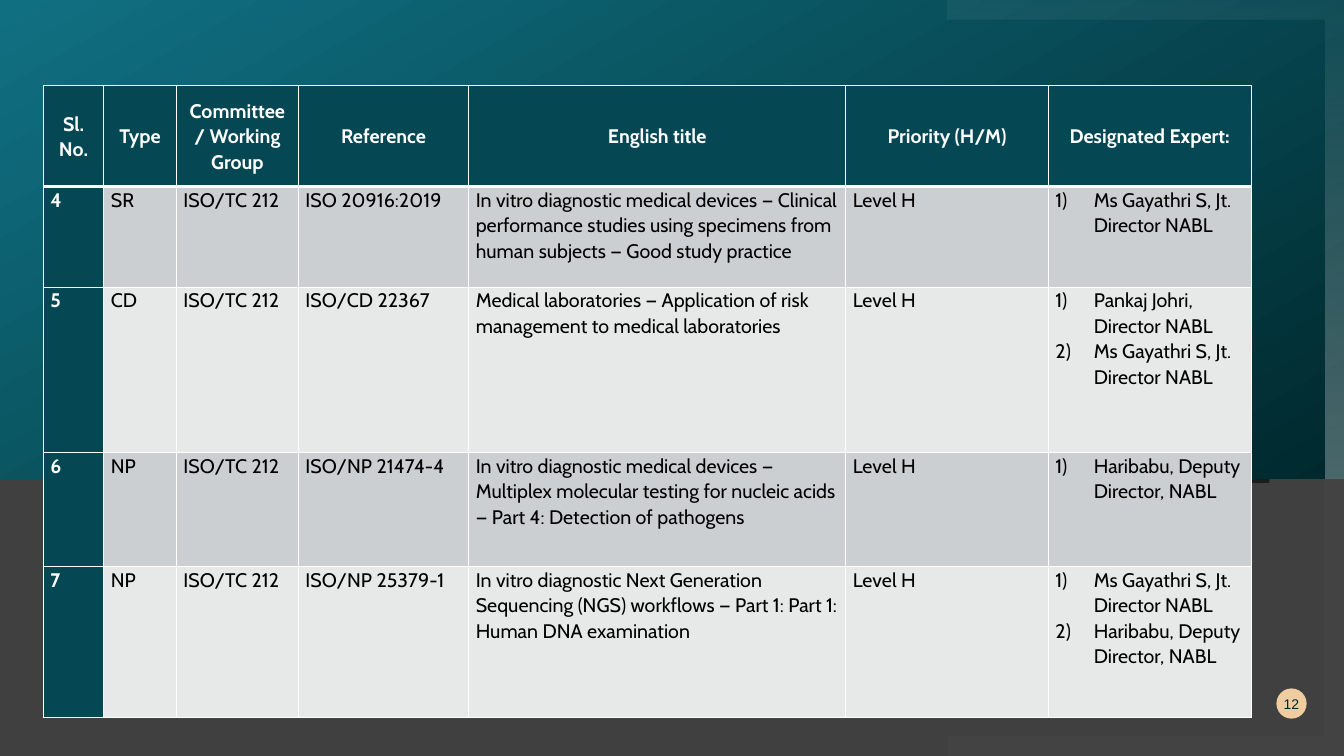
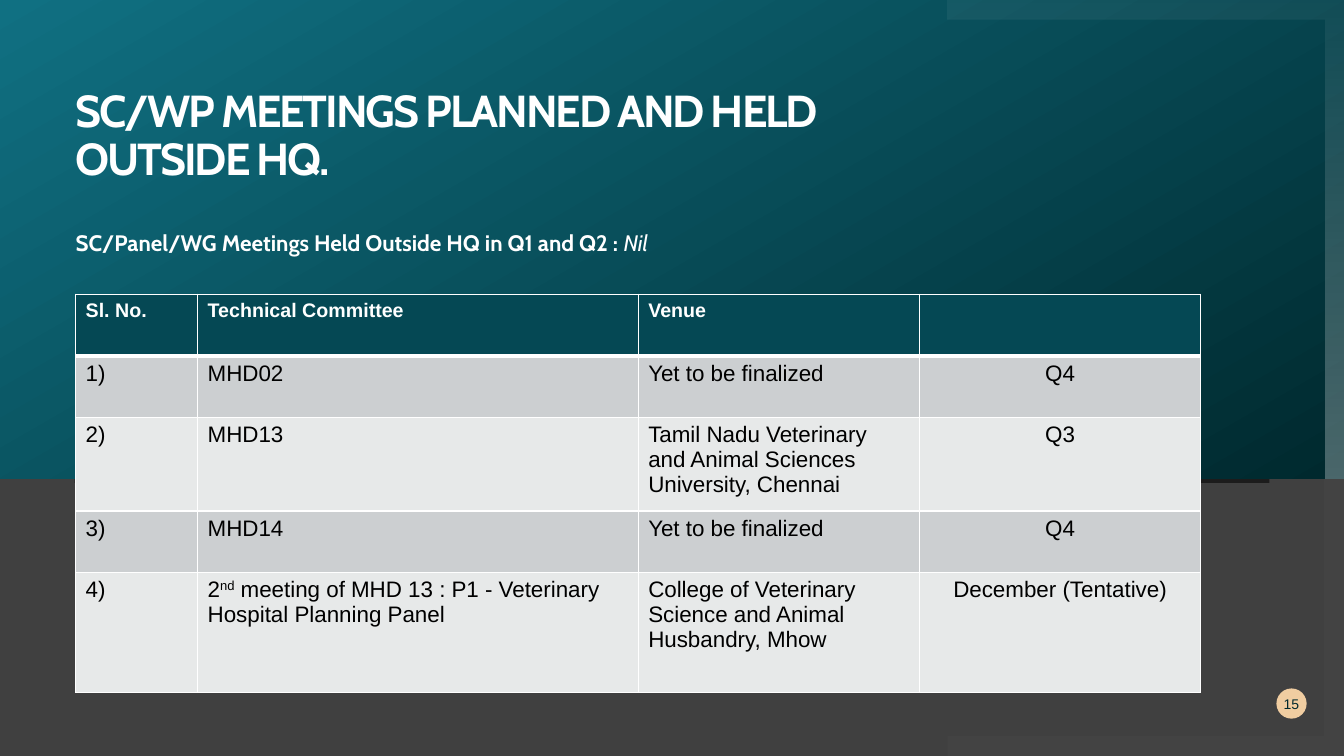
from dataclasses import dataclass

from lxml import etree
from pptx import Presentation
from pptx.dml.color import RGBColor
from pptx.enum.shapes import MSO_SHAPE
from pptx.enum.text import MSO_ANCHOR, MSO_AUTO_SIZE, PP_ALIGN
from pptx.oxml.ns import qn
from pptx.util import Inches, Pt

RECTANGLE, OVAL = MSO_SHAPE.RECTANGLE, MSO_SHAPE.OVAL
TOP, MIDDLE = MSO_ANCHOR.TOP, MSO_ANCHOR.MIDDLE
LEFT, CENTER = PP_ALIGN.LEFT, PP_ALIGN.CENTER
NO_AUTOFIT = MSO_AUTO_SIZE.NONE
TITLE_ONLY, BLANK = 5, 6


@dataclass(frozen=True)
class Theme:
    width: float = 13.33
    height: float = 7.5
    horizon: float = 4.75
    ground: str = "404040"
    dark: str = "00292E"
    teal: str = "107082"
    header: str = "054854"
    bands: tuple = ("CCCFD1", "E7E9E9")
    badge: str = "F0CDA1"
    gray: str = "808080"
    white: str = "FFFFFF"
    black: str = "000000"
    heading_font: str = "Cabin"
    plain_font: str = "Arial"
    title_size: int = 32
    subtitle_size: int = 16
    number_size: int = 10


THEME = Theme()


@dataclass(frozen=True)
class TableStyle:
    font: str
    header_size: int
    body_size: int
    side_margin: float
    top_margin: float
    paragraph: dict
    header_anchor: int
    header_align: int
    centered_columns: tuple = ()
    row_headings: bool = False


def rgb(value):
    return RGBColor.from_string(value)


def apply(target, values):
    for name, value in values.items():
        setattr(target, name, value)


def add_run(paragraph, text, size, color, font, **extra):
    run = paragraph.add_run()
    run.text = text
    apply(run.font, {"size": Pt(size), "name": font, **extra})
    run.font.color.rgb = rgb(color)
    return run


# Backdrop
def paint(shape, color, alphas=(), end_color=None, angle=0):
    """Fill a shape; the angle runs counterclockwise, alphas are percentages."""
    shape.shadow.inherit = False
    shape.line.fill.background()
    if end_color:
        shape.fill.gradient()
        shape.fill.gradient_angle = angle
        for stop, value in zip(shape.fill.gradient_stops, (color, end_color)):
            stop.color.rgb = rgb(value)
    else:
        shape.fill.solid()
        shape.fill.fore_color.rgb = rgb(color)
    colors = shape._element.spPr.iter(qn("a:srgbClr"))
    for element, alpha in zip(list(colors), alphas):
        etree.SubElement(element, qn("a:alpha")).set("val", str(alpha * 1000))


def add_box(slide, kind, box):
    return slide.shapes.add_shape(kind, *map(Inches, box))


def add_corner(slide, edge, inner):
    """Bracket along the right side, from a slide edge to the horizon."""
    left, right, thin = 9.4, THEME.width, THEME.width - 0.2
    points = [(left, edge), (right, edge), (right, THEME.horizon),
              (thin, THEME.horizon), (thin, inner), (left, inner)]
    points = [(Inches(x), Inches(y)) for x, y in points]
    builder = slide.shapes.build_freeform(*points[0])
    builder.add_line_segments(points[1:], close=True)
    return builder.convert_to_shape()


def add_backdrop(slide):
    shade = add_box(slide, RECTANGLE, (0.74, 4.74, 11.85, 0.05))
    paint(shade, THEME.black, [56])
    panel = add_box(slide, RECTANGLE, (0, 0, THEME.width, THEME.horizon))
    paint(panel, THEME.dark, end_color=THEME.teal, angle=120)
    paint(add_corner(slide, 0, 0.2), THEME.white, [5, 30],
          end_color=THEME.white, angle=270)
    paint(add_corner(slide, THEME.height, THEME.height - 0.2), THEME.gray, [5])


def add_page_number(slide, number):
    badge = add_box(slide, OVAL, (12.66, 6.83, 0.3, 0.3))
    paint(badge, THEME.badge)
    frame = badge.text_frame
    apply(frame, {"margin_left": 0, "margin_right": 0, "margin_top": 0,
                  "margin_bottom": 0, "vertical_anchor": MIDDLE,
                  "word_wrap": False})
    frame.paragraphs[0].alignment = CENTER
    add_run(frame.paragraphs[0], str(number), THEME.number_size, THEME.dark,
            THEME.plain_font)


# Title
def add_title(slide, box, heading, label, answer):
    title = slide.shapes.title
    apply(title, dict(zip(("left", "top", "width", "height"), map(Inches, box))))
    frame = title.text_frame
    apply(frame, {"margin_left": 0, "margin_right": 0, "margin_top": 0,
                  "margin_bottom": 0, "vertical_anchor": TOP,
                  "word_wrap": True, "auto_size": NO_AUTOFIT})
    lines = frame.paragraphs[0], frame.add_paragraph()
    for line, before in zip(lines, (0, 33)):
        apply(line, {"alignment": LEFT, "line_spacing": 0.9,
                     "space_before": Pt(before)})
    run = add_run(lines[0], heading, THEME.title_size, THEME.white,
                  THEME.heading_font, bold=True)
    run._r.get_or_add_rPr().set("spc", "-150")
    for text, emphasis in ((label, {"bold": True}),
                           (answer, {"bold": False, "italic": True})):
        add_run(lines[1], text, THEME.subtitle_size, THEME.white,
                THEME.heading_font, **emphasis)


# Tables
def set_borders(cell, widths):
    properties = cell._tc.get_or_add_tcPr()
    for side, width in zip("LRTB", widths):
        line = etree.SubElement(properties, qn(f"a:ln{side}"), w=str(Pt(width)))
        fill = etree.SubElement(line, qn("a:solidFill"))
        etree.SubElement(fill, qn("a:srgbClr"), val=THEME.white)


def number_paragraph(paragraph):
    properties = paragraph._p.get_or_add_pPr()
    indent = Inches(0.38)
    properties.set("marL", str(indent))
    properties.set("indent", str(-indent))
    etree.SubElement(properties, qn("a:buFont"), typeface="+mj-lt")
    etree.SubElement(properties, qn("a:buAutoNum"), type="arabicParenR")


def fill_cell(cell, content, style, row, column):
    """Write a string, or a tuple as a numbered list; ^ marks superscript."""
    is_header = row == 0
    is_heading = is_header or (style.row_headings and column == 0)
    set_borders(cell, (1, 1, 3 if row == 1 else 1, 3 if is_header else 1))
    cell.fill.solid()
    cell.fill.fore_color.rgb = rgb(
        THEME.header if is_heading else THEME.bands[(row - 1) % 2])
    side, top = Inches(style.side_margin), Inches(style.top_margin)
    apply(cell, {"margin_left": side, "margin_right": side, "margin_top": top,
                 "margin_bottom": top,
                 "vertical_anchor": style.header_anchor if is_header else TOP})
    is_list = isinstance(content, tuple)
    items = content if is_list else (content,)
    centered = column in style.centered_columns
    align = style.header_align if is_header else CENTER if centered else LEFT
    for index, item in enumerate(items):
        frame = cell.text_frame
        paragraph = frame.add_paragraph() if index else frame.paragraphs[0]
        apply(paragraph, {"alignment": align, **style.paragraph})
        if is_list:
            if index < len(items) - 1:
                paragraph.space_after = Pt(0)
            number_paragraph(paragraph)
        for part, text in enumerate(item.split("^")):
            if not text:
                continue
            run = add_run(paragraph, text,
                          style.header_size if is_header else style.body_size,
                          THEME.white if is_heading else THEME.black,
                          style.font, bold=is_heading)
            if part % 2:
                run._r.get_or_add_rPr().set("baseline", "30000")


def add_styled_table(slide, origin, widths, heights, rows, style):
    frame = slide.shapes.add_table(
        len(heights), len(widths), *map(Inches, origin),
        Inches(sum(widths)), Inches(sum(heights)))
    table = frame.table
    table.horz_banding = False
    for column, width in zip(table.columns, widths):
        column.width = Inches(width)
    for row, height in zip(table.rows, heights):
        row.height = Inches(height)
    for r, contents in enumerate(rows):
        for c, content in enumerate(contents):
            fill_cell(table.cell(r, c), content, style, r, c)


# Slides
STANDARDS_STYLE = TableStyle(
    THEME.heading_font, 14, 14, 0.07, 0,
    {"line_spacing": 1.07, "space_after": Pt(8)}, MIDDLE, CENTER,
    row_headings=True)
MEETINGS_STYLE = TableStyle(
    THEME.plain_font, 14, 16, 0.1, 0.05, {}, TOP, LEFT, centered_columns=(3,))

GAYATHRI = "Ms Gayathri S, Jt. Director NABL"
HARIBABU = "Haribabu, Deputy Director, NABL"
COMMITTEE, LEVEL = "ISO/TC 212", "Level H"
STANDARDS = [
    ("Sl. No.", "Type", "Committee / Working Group", "Reference",
     "English title", "Priority (H/M)", "Designated Expert:"),
    ("4", "SR", COMMITTEE, "ISO 20916:2019",
     "In vitro diagnostic medical devices — Clinical performance studies "
     "using specimens from human subjects — Good study practice",
     LEVEL, (GAYATHRI,)),
    ("5", "CD", COMMITTEE, "ISO/CD 22367",
     "Medical laboratories — Application of risk management to medical "
     "laboratories", LEVEL, ("Pankaj Johri, Director NABL", GAYATHRI)),
    ("6", "NP", COMMITTEE, "ISO/NP 21474-4",
     "In vitro diagnostic medical devices — Multiplex molecular testing for "
     "nucleic acids — Part 4: Detection of pathogens", LEVEL, (HARIBABU,)),
    ("7", "NP", COMMITTEE, "ISO/NP 25379-1",
     "In vitro diagnostic Next Generation Sequencing (NGS) workflows — "
     "Part 1: Part 1: Human DNA examination", LEVEL, (GAYATHRI, HARIBABU)),
]
MEETINGS = [
    ("Sl. No.", "Technical Committee", "Venue", ""),
    ("1)", "MHD02", "Yet to be finalized", "Q4"),
    ("2)", "MHD13",
     "Tamil Nadu Veterinary and Animal Sciences University, Chennai", "Q3"),
    ("3)", "MHD14", "Yet to be finalized", "Q4"),
    ("4)", "2^nd^ meeting of MHD 13 : P1 - Veterinary Hospital Planning Panel",
     "College of Veterinary Science and Animal Husbandry, Mhow",
     "December (Tentative)"),
]


def start_slide(prs, layout, number):
    slide = prs.slides.add_slide(prs.slide_layouts[layout])
    add_backdrop(slide)
    if slide.shapes.title is not None:
        # Bring the title in front of the backdrop
        slide.shapes._spTree.append(slide.shapes.title._element)
    add_page_number(slide, number)
    return slide


def build_standards(prs):
    slide = start_slide(prs, BLANK, 12)
    add_styled_table(slide, (0.43, 0.85),
                     (0.6, 0.72, 1.21, 1.69, 3.74, 2.01, 2.01),
                     (1, 1, 1.64, 1.13, 1.5), STANDARDS, STANDARDS_STYLE)


def build_meetings(prs):
    slide = start_slide(prs, TITLE_ONLY, 15)
    add_title(slide, (0.75, 0.88, 8.27, 1.8),
              "SC/WP MEETINGS PLANNED AND HELD OUTSIDE HQ.",
              "SC/Panel/WG Meetings Held Outside HQ in Q1 and Q2 : ", "Nil")
    add_styled_table(slide, (0.75, 2.92), (1.21, 4.37, 2.79, 2.79),
                     (0.61, 0.61, 0.93, 0.61, 1.19), MEETINGS, MEETINGS_STYLE)


def main():
    prs = Presentation()
    prs.slide_width, prs.slide_height = Inches(THEME.width), Inches(THEME.height)
    ground = prs.slide_master.background.fill
    ground.solid()
    ground.fore_color.rgb = rgb(THEME.ground)
    build_standards(prs)
    build_meetings(prs)
    prs.save("out.pptx")


if __name__ == "__main__":
    main()
